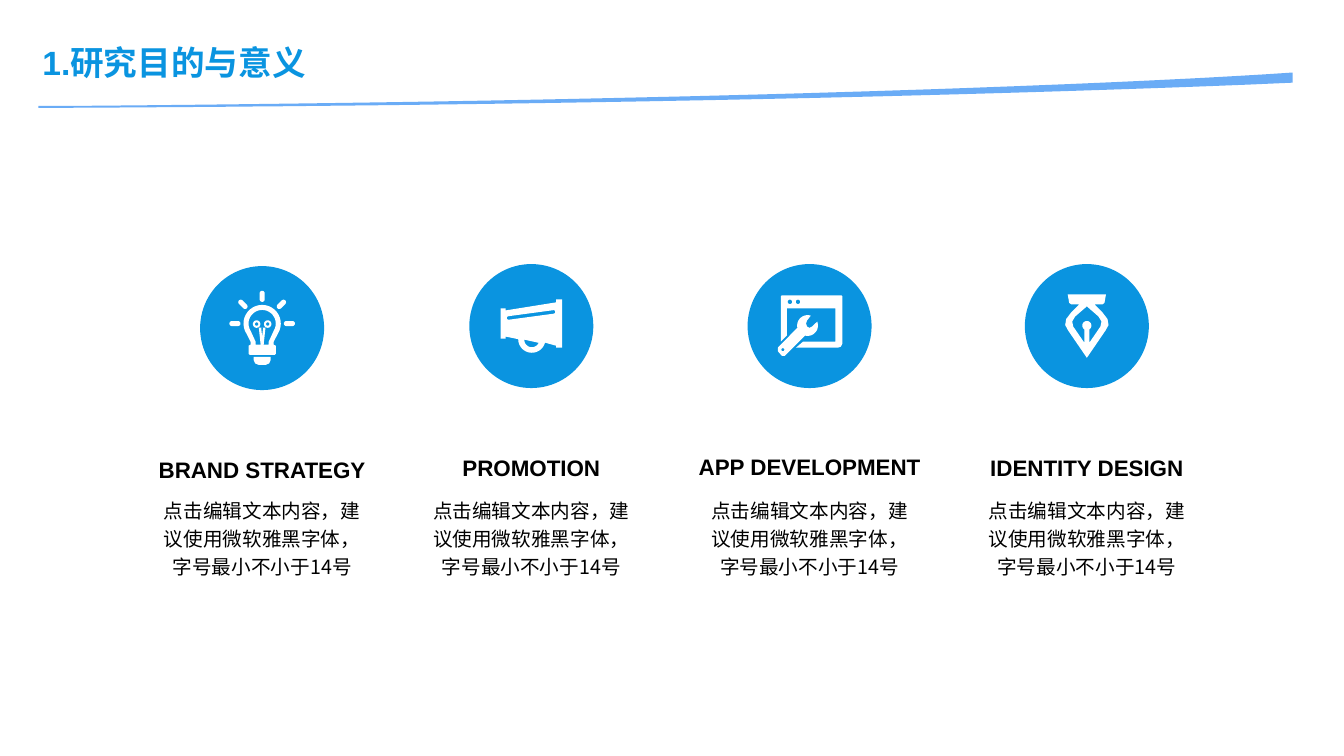
from math import atan2, cos, degrees, radians, sin

from pptx import Presentation
from pptx.dml.color import RGBColor
from pptx.enum.shapes import MSO_SHAPE as Preset
from pptx.enum.text import MSO_ANCHOR as Anchor, PP_ALIGN as Align
from pptx.oxml.ns import qn
from pptx.util import Inches, Pt

BLUE = RGBColor(0x0A, 0x94, 0xE0)
LIGHT_BLUE = RGBColor(0x6A, 0xAC, 0xF6)
WHITE = RGBColor(0xFF, 0xFF, 0xFF)
BLACK = RGBColor(0, 0, 0)
CJK_FONT = "Noto Sans CJK SC"
BODY = "点击编辑文本内容，建议使用微软雅黑字体，字号最小不小于14号"
DISC = 1.23


# Outline helpers; icon units are hundredths of an inch from the disc centre
def arc(cx, cy, r, start=0, end=360, steps=24):
    angles = [radians(start + (end - start) * i / steps) for i in range(steps + 1)]
    return [(cx + r * cos(a), cy + r * sin(a)) for a in angles]


def capsule(x1, y1, x2, y2, r):
    turn = degrees(atan2(y2 - y1, x2 - x1))
    return (arc(x1, y1, r, turn + 90, turn + 270, 8)
            + arc(x2, y2, r, turn - 90, turn + 90, 8))


def curve(p0, p1, p2, p3, steps=40):
    points = []
    for i in range(steps + 1):
        t = i / steps
        weights = ((1 - t) ** 3, 3 * t * (1 - t) ** 2, 3 * t * t * (1 - t), t ** 3)
        points.append(tuple(sum(w * p[axis] for w, p in zip(weights, (p0, p1, p2, p3)))
                            for axis in (0, 1)))
    return points


def mirrored(right_half):
    return right_half + [(-x, y) for x, y in reversed(right_half)]


def bulb():
    rays = []
    for angle in range(180, 361, 45):
        dx, dy = cos(radians(angle)), sin(radians(angle))
        rays.append(capsule(24 * dx, 24 * dy - 4.5, 30 * dx, 30 * dy - 4.5, 2.5))
    glass = arc(0, -4.5, 18.5, 148, 392) + mirrored(
        [(11.5, 13.5), (11.5, 16.5), (13.5, 17.5), (13.5, 25.5), (12.5, 26.5)])
    hollow = arc(0, -4.5, 13.5, 148, 392) + mirrored([(6.5, 13.5), (6.5, 16.5)])
    filament = [arc(x, -4, r) for x in (-5.5, 5.5) for r in (3.7, 1.7)]
    stem = mirrored([(3.3, -0.5), (1.5, 16.5)])
    slit = [(-1, -0.5), (1, -0.5), (0, 8.5)]
    cap = mirrored([(8.5, 28.5), (8.5, 31.5), (7, 35), (3.5, 36.5)])
    return [*rays, glass, hollow, *filament, stem, slit, cap]


def megaphone():
    horn = [(-30.5, -17.5), (-25.5, -17.5), (-25.5, -15.5), (24.5, -23.5),
            (24.5, -26.5), (30.5, -26.5), (30.5, 21.5), (24.5, 21.5), (24.5, 19.5),
            *arc(0.5, 13, 13.5, 15, 180), (-25.5, 10.5), (-25.5, 12.5), (-30.5, 12.5)]
    handle = arc(0.5, 13.5, 7.5, 25, 180)
    return [horn, handle, capsule(-22.5, -8, 22, -14, 1.75)]


def app_window():
    frame = [(-28.5, -29.5), (-27.5, -30.5), (31.5, -30.5), (32.5, -29.5),
             (32.5, 17.5), (31, 20.5), (28, 21.5), (-13.5, 21.5), (-6.5, 15.5),
             (25.5, 15.5), (25.5, -17.5), (-22.5, -17.5), (-22.5, 9.5), (-28.5, 15.5)]
    buttons = [arc(x, -24, 2.2) for x in (-19.5, -11.5)]
    wrench = [*arc(-2, -0.5, 10.3, -22, 104), (-24.5, 29.5), (-27.5, 29.5),
              (-31.5, 25), (-31.5, 21.5), *arc(-2, -0.5, 10.3, 168, 288),
              (-2.5, -5.5), (-3.5, -2.5), (-2.5, 0.5), (0, 1.8), (2.5, 0.5)]
    return [frame, *buttons, wrench, arc(-26.5, 23.5, 1.5)]


def pen_nib():
    nib = mirrored([(19, -31.5), (17.5, -23), (15.5, -21.5), (7.5, -21.5),
                    (15.5, -13.5), (20.5, -7), (21.5, -1), (18.5, 4.5), (0, 31.5)])
    side = [(0, -19.5), (11.5, -9.5), (14.5, -4.5), (13.5, 0.5), (2.5, 16.5), (2.5, 4.5)]
    return [nib, mirrored(side + arc(0, -0.5, 4.5, 55, -90))]


# Drawing
def paint(shape, color):
    shape.shadow.inherit = False
    shape.fill.solid()
    shape.fill.fore_color.rgb = color
    shape.line.fill.background()


def draw_outline(slide, contours, left, top, unit, color):
    contours = [[(Inches(left + x * unit), Inches(top + y * unit)) for x, y in contour]
                for contour in contours]
    builder = slide.shapes.build_freeform(*contours[0][0])
    for number, contour in enumerate(contours):
        if number:
            builder.move_to(*contour[0])
        builder.add_line_segments(contour[1:], close=True)
    paint(builder.convert_to_shape(), color)


def write(shape, text, size, color, align, latin, bold=False, spacing=None, wrap=True):
    frame = shape.text_frame
    frame.word_wrap = wrap
    frame.vertical_anchor = Anchor.TOP
    paragraph = frame.paragraphs[0]
    paragraph.text = text
    paragraph.alignment = align
    paragraph.line_spacing = spacing
    font = paragraph.font
    font.size, font.bold, font.name = Pt(size), bold, latin
    font.color.rgb = color
    east_asian = font._element.makeelement(qn("a:ea"), {"typeface": CJK_FONT})
    font._element.find(qn("a:latin")).addnext(east_asian)


def header(slide, left, top, width, height):
    # Tapering rule under the title
    lower = curve((11.99, 0.12), (7.19, 0.31), (2.05, 0.34), (0.21, 0.35))
    upper = curve((0.43, 0.33), (7.77, 0.27), (11.59, 0.06), (12.43, 0))
    rule = [(12.44, 0), (12.44, 0.1), *lower, (0, 0.35), (0, 0.33), *upper]
    draw_outline(slide, [rule], left + 0.06, top + 0.35, 1, LIGHT_BLUE)
    # Title
    title = slide.shapes.title
    title.left, title.top = Inches(left), Inches(top)
    title.width, title.height = Inches(width), Inches(height)
    write(title, "1.研究目的与意义", 24, BLUE, Align.LEFT, "Arial", bold=True, spacing=1.0)


def topic(slide, left, top, width, icon, heading, heading_width, heading_top):
    centre = left + width / 2
    # Icon disc
    disc = slide.shapes.add_shape(Preset.OVAL, Inches(centre - DISC / 2), Inches(top),
                                  Inches(DISC), Inches(DISC))
    paint(disc, BLUE)
    draw_outline(slide, icon(), centre, top + DISC / 2, 0.01, WHITE)
    # Heading and text
    label = slide.shapes.add_textbox(Inches(centre - heading_width / 2),
                                     Inches(heading_top), Inches(heading_width), Inches(0.39))
    write(label, heading, 16, BLACK, Align.CENTER, "Arial", True, 1.2, wrap=False)
    body = slide.shapes.add_textbox(Inches(left), Inches(4.85), Inches(width), Inches(0.95))
    write(body, BODY, 14, BLACK, Align.CENTER, CJK_FONT, spacing=1.2)


def main():
    deck = Presentation()
    deck.slide_width, deck.slide_height = Inches(13.33), Inches(7.5)
    slide = deck.slides.add_slide(deck.slide_layouts[5])
    header(slide, 0.32, 0.37, 3.07, 0.5)
    topics = [
        (1.5, 2.64, bulb, "BRAND STRATEGY", 2.27, 4.42),
        (4.17, 2.62, megaphone, "PROMOTION", 1.59, 4.4),
        (6.93, 2.62, app_window, "APP DEVELOPMENT", 2.42, 4.39),
        (9.68, 2.62, pen_nib, "IDENTITY DESIGN", 2.14, 4.4),
    ]
    for left, top, icon, heading, heading_width, heading_top in topics:
        topic(slide, left, top, 2.2, icon, heading, heading_width, heading_top)
    deck.save("out.pptx")


if __name__ == "__main__":
    main()
